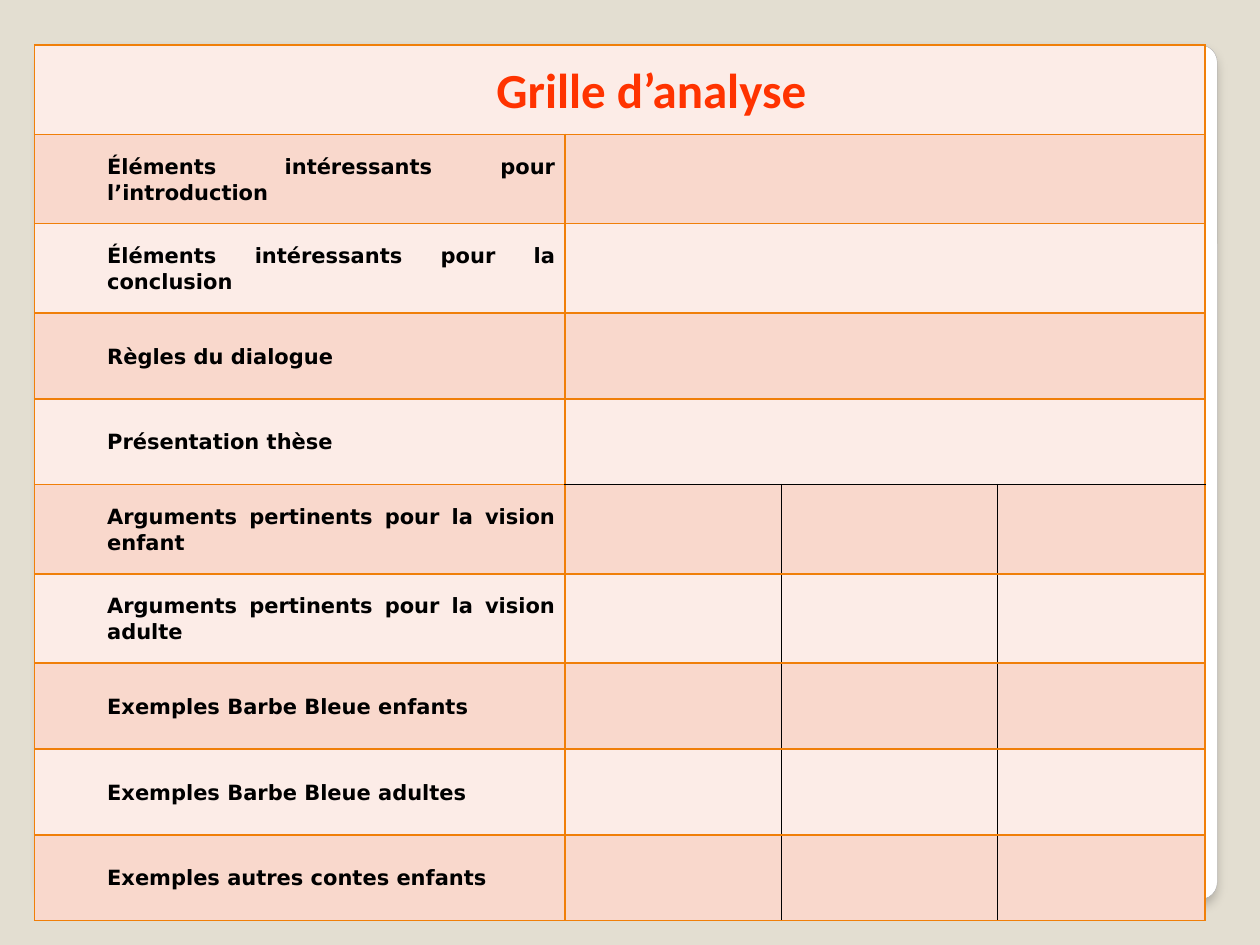
import dataclasses
import lxml.etree
import pptx
import pptx.dml.color
import pptx.enum.shapes
import pptx.enum.text
import pptx.oxml.ns
import pptx.util

Cm = pptx.util.Cm
Pt = pptx.util.Pt
qn = pptx.oxml.ns.qn
Align = pptx.enum.text.PP_ALIGN


@dataclasses.dataclass(frozen=True)
class Theme:
    back: str = "E3DED1"
    panel: str = "FFFFFF"
    edge: str = "A4A4A4"
    light: str = "FCECE7"
    dark: str = "F9D8CC"
    rule: str = "F07F09"
    black: str = "000000"
    title: str = "FF3300"
    head_font: str = "Calibri"
    text_font: str = "DejaVu Sans"
    head_size: int = 28
    text_size: int = 12


@dataclasses.dataclass(frozen=True)
class Row:
    label: str
    height: float = 1.8
    split: bool = False


THEME = Theme()
TITLE = "Grille d’analyse"
WIDTHS = (10.69, 4.36, 4.36, 4.18)
ROWS = (
    Row(TITLE),
    Row("Éléments intéressants pour l’introduction"),
    Row("Éléments intéressants pour la conclusion"),
    Row("Règles du dialogue", 1.73),
    Row("Présentation thèse", 1.73),
    Row("Arguments pertinents pour la vision enfant", split=True),
    Row("Arguments pertinents pour la vision adulte", split=True),
    Row("Exemples Barbe Bleue enfants", 1.73, True),
    Row("Exemples Barbe Bleue adultes", 1.73, True),
    Row("Exemples autres contes enfants", 1.73, True),
)


def color(code: str) -> pptx.dml.color.RGBColor:
    return pptx.dml.color.RGBColor.from_string(code)


def add_panel(slide) -> None:
    panel = slide.shapes.add_shape(
        pptx.enum.shapes.MSO_SHAPE.ROUNDED_RECTANGLE,
        Cm(0.84), Cm(0.91), Cm(23.7), Cm(17.22),
    )
    panel.adjustments[0] = 0.02
    panel.fill.solid()
    panel.fill.fore_color.rgb = color(THEME.panel)
    panel.line.color.rgb = color(THEME.edge)
    panel.line.width = Pt(0.16)
    panel.shadow.inherit = False
    effects = panel._element.spPr.find(qn("a:effectLst"))
    shadow = lxml.etree.SubElement(
        effects, qn("a:outerShdw"),
        blurRad=str(Pt(6)), dist=str(Pt(4)), dir="5400000",
        algn="tl", rotWithShape="0",
    )
    tone = lxml.etree.SubElement(shadow, qn("a:srgbClr"), val=THEME.black)
    lxml.etree.SubElement(tone, qn("a:alpha"), val="25000")


def set_borders(cell, sides: dict[str, str]) -> None:
    props = cell._tc.get_or_add_tcPr()
    for side, code in sides.items():
        line = lxml.etree.SubElement(props, qn(f"a:ln{side}"), w=str(Pt(1)))
        fill = lxml.etree.SubElement(line, qn("a:solidFill"))
        lxml.etree.SubElement(fill, qn("a:srgbClr"), val=code)


def pick_sides(row: int, col: int) -> dict[str, str]:
    split = ROWS[row].split
    above = row > 0 and split and not ROWS[row - 1].split
    below = row + 1 < len(ROWS) and not split and ROWS[row + 1].split
    marks = {
        "L": split and col > 1,
        "R": split and 0 < col < len(WIDTHS) - 1,
        "T": above and col > 0,
        "B": below and col > 0,
    }
    return {side: THEME.black if mark else THEME.rule for side, mark in marks.items()}


def set_label(cell, text: str, head: bool) -> None:
    cell.vertical_anchor = pptx.enum.text.MSO_ANCHOR.MIDDLE
    cell.margin_left = cell.margin_right = Cm(0.19)
    cell.margin_top = cell.margin_bottom = 0
    cell.text_frame.text = text
    para = cell.text_frame.paragraphs[0]
    para.alignment = Align.CENTER if head else Align.JUSTIFY
    para.line_spacing = 1.07
    props = para._p.get_or_add_pPr()
    props.set("marL", str(Cm(1.27)))
    props.set("indent", "0")
    font = para.runs[0].font
    font.bold = True
    font.name = THEME.head_font if head else THEME.text_font
    font.size = Pt(THEME.head_size if head else THEME.text_size)
    font.color.rgb = color(THEME.title if head else THEME.black)


def add_grid(slide) -> None:
    tall = sum(row.height for row in ROWS)
    frame = slide.shapes.add_table(
        len(ROWS), len(WIDTHS), Cm(0.7), Cm(0.91), Cm(sum(WIDTHS)), Cm(tall)
    )
    table = frame.table
    table.first_row = table.horz_banding = False
    for col, width in enumerate(WIDTHS):
        table.columns[col].width = Cm(width)
    last = len(WIDTHS) - 1
    for num, row in enumerate(ROWS):
        table.rows[num].height = Cm(row.height)
        for col in range(len(WIDTHS)):
            cell = table.cell(num, col)
            set_borders(cell, pick_sides(num, col))
            cell.fill.solid()
            cell.fill.fore_color.rgb = color(THEME.dark if num % 2 else THEME.light)
        set_label(table.cell(num, 0), row.label, num == 0)
        if not row.split:
            table.cell(num, min(num, 1)).merge(table.cell(num, last))


def main() -> None:
    deck = pptx.Presentation()
    deck.slide_width, deck.slide_height = Cm(25.4), Cm(19.05)
    slide = deck.slides.add_slide(deck.slide_layouts[6])
    slide.background.fill.solid()
    slide.background.fill.fore_color.rgb = color(THEME.back)
    add_panel(slide)
    add_grid(slide)
    deck.save("out.pptx")


if __name__ == "__main__":
    main()
